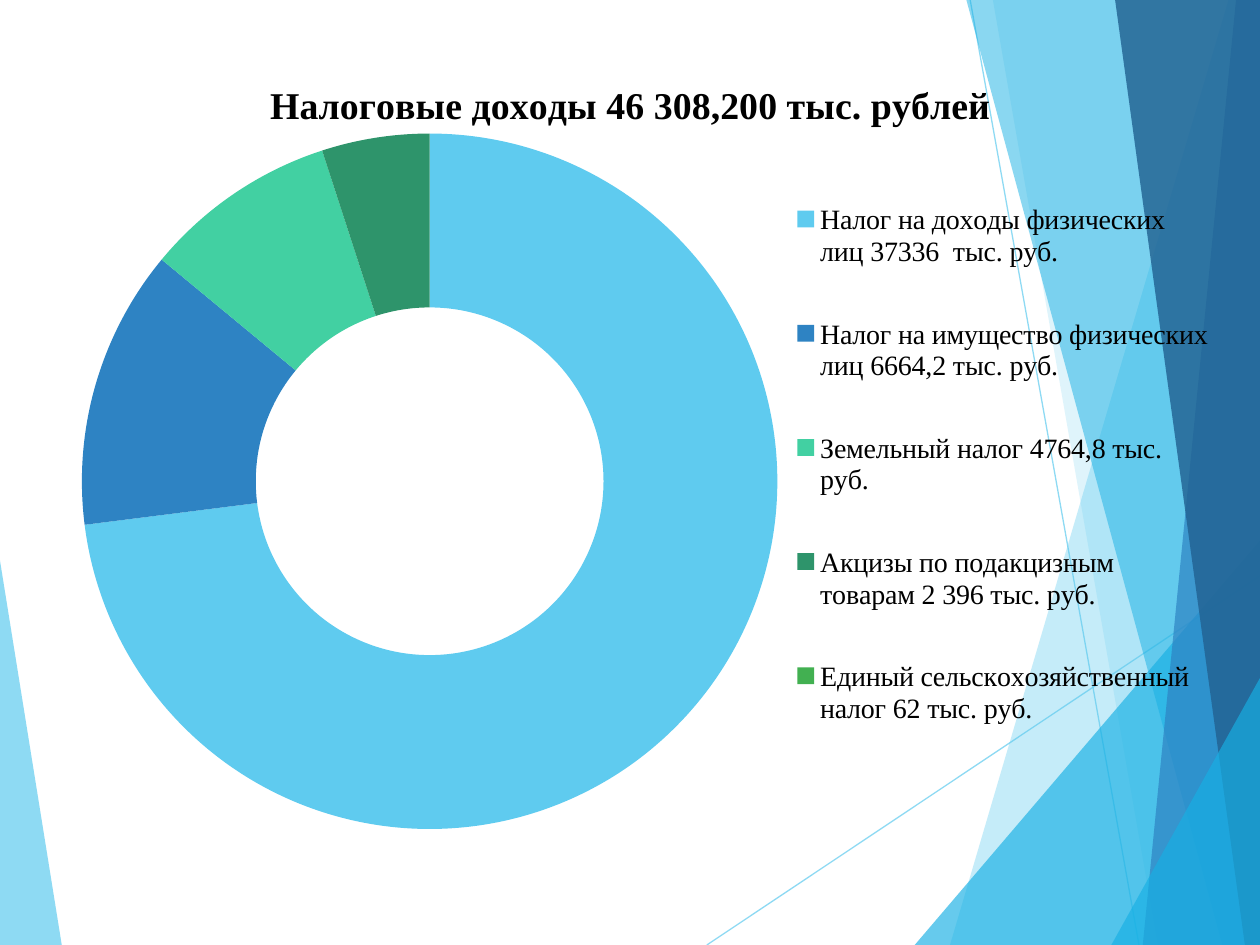
"""Build a slide with a doughnut chart of tax revenue over a faceted backdrop."""
from typing import NamedTuple

from lxml import etree
from pptx import Presentation
from pptx.chart import data as cd
from pptx.dml.color import RGBColor
from pptx.enum import chart as ec, shapes as es
from pptx.oxml import ns
from pptx.util import Inches, Pt

SKY = RGBColor(0x5F, 0xCB, 0xEF)
CYAN = RGBColor(0x17, 0xB0, 0xE4)
BLUE = RGBColor(0x2E, 0x83, 0xC3)
NAVY = RGBColor(0x22, 0x62, 0x92)
MINT = RGBColor(0x42, 0xD0, 0xA2)
PINE = RGBColor(0x2E, 0x94, 0x6B)
GREEN = RGBColor(0x42, 0xB0, 0x51)
BLACK = RGBColor(0, 0, 0)
FONT = "Times New Roman"
WIDE, HIGH = 10, 7.5
SPAN, RISE = 9.37, 6.46
TITLE = "Налоговые доходы 46 308,200 тыс. рублей"


class Shard(NamedTuple):
    dots: list[tuple[float, float]]
    color: RGBColor
    alpha: int


class Ray(NamedTuple):
    start: tuple[float, float]
    end: tuple[float, float]


class Tax(NamedTuple):
    label: str
    share: int
    color: RGBColor


def band(top: float, foot: float, color: RGBColor, alpha: int) -> Shard:
    return Shard([(top, 0), (foot, HIGH), (WIDE, HIGH), (WIDE, 0)], color, alpha)


def wedge(foot: float, rise: float, alpha: int) -> Shard:
    return Shard([(foot, HIGH), (WIDE, rise), (WIDE, HIGH)], CYAN, alpha)


LEFT = Shard([(0, 4.45), (0.49, HIGH), (0, HIGH)], SKY, 70)
RAYS = [Ray((5.61, HIGH), (WIDE, 4.57)), Ray((7.7, 0), (9.04, HIGH))]
RIGHT = [
    band(9.75, 7.54, SKY, 36),
    band(7.88, 9.19, SKY, 20),
    wedge(7.26, 4.29, 66),
    band(7.67, 9.7, CYAN, 50),
    band(9.81, 9.07, BLUE, 70),
    band(8.85, 9.88, NAVY, 82),
    wedge(8.82, 5.38, 66),
]
TAXES = [
    Tax("Налог на доходы физических лиц 37336  тыс. руб.", 73, SKY),
    Tax("Налог на имущество физических лиц 6664,2 тыс. руб.", 13, BLUE),
    Tax("Земельный налог 4764,8 тыс. руб.", 9, MINT),
    Tax("Акцизы по подакцизным товарам 2 396 тыс. руб.", 5, PINE),
    Tax("Единый сельскохозяйственный налог 62 тыс. руб.", 0, GREEN),
]


def fade(shape, alpha: int) -> None:
    tint = next(shape._element.spPr.iter(ns.qn("a:srgbClr")))
    etree.SubElement(tint, ns.qn("a:alpha")).set("val", str(alpha * 1000))


def draw_shard(slide, shard: Shard) -> None:
    dots = [(Inches(x), Inches(y)) for x, y in shard.dots]
    pen = slide.shapes.build_freeform(*dots[0])
    pen.add_line_segments(dots[1:], close=True)
    shape = pen.convert_to_shape()
    shape.shadow.inherit = False
    shape.fill.solid()
    shape.fill.fore_color.rgb = shard.color
    shape.line.fill.background()
    fade(shape, shard.alpha)


def draw_ray(slide, ray: Ray) -> None:
    ends = [Inches(n) for n in ray.start + ray.end]
    line = slide.shapes.add_connector(es.MSO_CONNECTOR.STRAIGHT, *ends)
    line.line.color.rgb = SKY
    line.line.width = Pt(0.75)
    fade(line, 70)
    etree.SubElement(line._element.spPr, ns.qn("a:effectLst"))


def lay_out(part, index: int, inner: bool = False, **box: float) -> None:
    for old in part.findall(ns.qn("c:layout")):
        part.remove(old)
    layout = etree.Element(ns.qn("c:layout"))
    manual = etree.SubElement(layout, ns.qn("c:manualLayout"))
    rules = {"layoutTarget": "inner"} if inner else {}
    rules |= {"xMode": "edge", "yMode": "edge"}
    rules |= {key: size / (SPAN if key in "xw" else RISE) for key, size in box.items()}
    for name, value in rules.items():
        etree.SubElement(manual, ns.qn(f"c:{name}")).set("val", str(value))
    part.insert(index, layout)


def draw_chart(slide, taxes: list[Tax]) -> None:
    data = cd.CategoryChartData()
    data.categories = [tax.label for tax in taxes]
    data.add_series("Series 1", [tax.share for tax in taxes])
    box = [Inches(n) for n in (0.35, 0.44, SPAN, RISE)]
    chart = slide.shapes.add_chart(ec.XL_CHART_TYPE.DOUGHNUT, *box, data).chart
    chart.font.name, chart.font.size = FONT, Pt(18)
    chart.font.color.rgb = BLACK
    plot = chart.plots[0]
    plot.vary_by_categories = True
    plot.has_data_labels = False
    for i, tax in enumerate(taxes):
        look = plot.series[0].points[i].format
        look.fill.solid()
        look.fill.fore_color.rgb = tax.color
        look.line.fill.background()
    lay_out(chart._chartSpace.chart.plotArea, 0, True, x=0.3, y=0.62, w=5.52, h=5.52)

    chart.has_title = True
    run = chart.chart_title.text_frame.paragraphs[0].add_run()
    run.text = TITLE
    run.font.name, run.font.size, run.font.bold = FONT, Pt(21.6), True
    run.font.color.rgb = BLACK
    lay_out(chart.chart_title._element, 1, x=1.74, y=0.15)

    chart.has_legend = True
    chart.legend.position = ec.XL_LEGEND_POSITION.RIGHT
    chart.legend.include_in_layout = False
    chart.legend.font.name, chart.legend.font.size = FONT, Pt(16)
    chart.legend.font.color.rgb = BLACK
    lay_out(chart.legend._element, 1, x=5.99, y=0.78, w=3.31, h=4.94)


def main() -> None:
    deck = Presentation()
    deck.slide_width, deck.slide_height = Inches(WIDE), Inches(HIGH)
    slide = deck.slides.add_slide(deck.slide_layouts[6])
    draw_shard(slide, LEFT)
    for ray in RAYS:
        draw_ray(slide, ray)
    for shard in RIGHT:
        draw_shard(slide, shard)
    draw_chart(slide, TAXES)
    deck.save("out.pptx")


if __name__ == "__main__":
    main()
